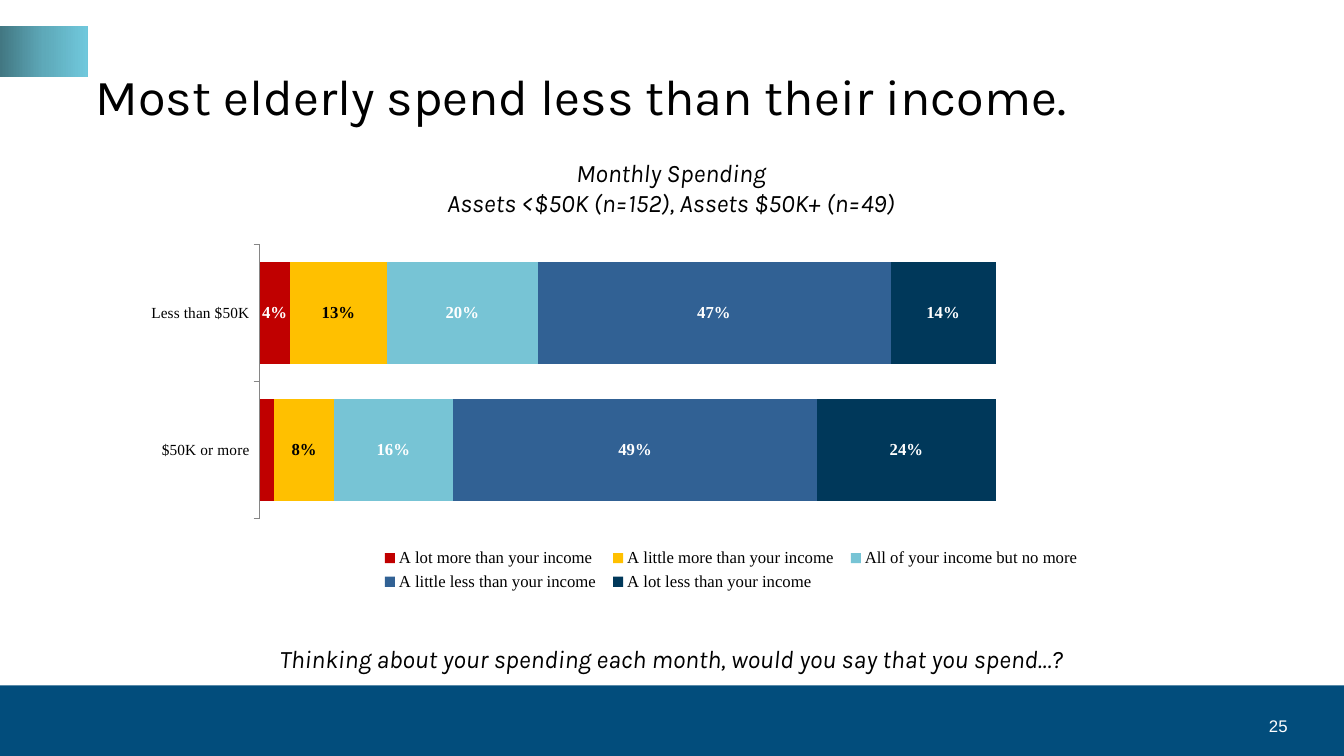
from copy import deepcopy
from dataclasses import dataclass

from pptx import Presentation
from pptx.chart.data import CategoryChartData
from pptx.dml.color import RGBColor
from pptx.enum.chart import XL_CHART_TYPE, XL_LABEL_POSITION as LABEL_POS
from pptx.enum.chart import XL_LEGEND_POSITION, XL_TICK_LABEL_POSITION, XL_TICK_MARK as TICK
from pptx.enum.shapes import MSO_SHAPE
from pptx.enum.text import MSO_ANCHOR as ANCHOR, MSO_AUTO_SIZE as AUTO, PP_ALIGN as ALIGN
from pptx.oxml import parse_xml
from pptx.oxml.ns import nsdecls
from pptx.util import Pt

PX = 9144
COLORS = {
    "black": "000000", "white": "FFFFFF", "band": "024D7C", "axis": "868686",
    "red": "C00000", "amber": "FFC000", "aqua": "77C4D5", "blue": "316194", "navy": "00385A",
    "tag_start": "427782", "tag_mid": "5EA9B9", "tag_end": "70C8DC",
}
CATEGORIES = ["Less than $50K", "$50K or more"]


@dataclass
class Label:
    text: str
    box: tuple[int, int, int, int]
    size: int = 18
    font: str = "Karla"
    color: str = "black"
    align: ALIGN = ALIGN.CENTER
    anchor: ANCHOR = ANCHOR.TOP
    italic: bool = False
    wrap: bool = False


@dataclass
class Answer:
    name: str
    shares: tuple[float, float]
    fill: str
    ink: str = "white"


TITLE = Label("Most elderly spend less than their income.", (85, 48, 1175, 94), 36,
              align=ALIGN.LEFT, anchor=ANCHOR.MIDDLE, wrap=True)
LABELS = [
    Label("25", (1197, 700, 90, 40), 12, "Arial", "white", ALIGN.RIGHT, ANCHOR.MIDDLE, wrap=True),
    Label("Monthly Spending\nAssets <$50K (n=152), Assets $50K+ (n=49)",
          (405, 151, 521, 71), italic=True),
    Label("Thinking about your spending each month, would you say that you spend…?",
          (228, 633, 876, 40), italic=True),
]
ANSWERS = [
    Answer("A lot more than your income", (0.04, 0.02), "red"),
    Answer("A little more than your income", (0.13, 0.08), "amber", "black"),
    Answer("All of your income but no more", (0.20, 0.16), "aqua"),
    Answer("A little less than your income", (0.47, 0.49), "blue"),
    Answer("A lot less than your income", (0.14, 0.24), "navy"),
]


def rgb(name: str) -> RGBColor:
    return RGBColor.from_string(COLORS[name])


def emu(box: tuple[int, int, int, int]) -> list[int]:
    return [n * PX for n in box]


def style_font(font, size: int, name: str, color: str, bold: bool = False,
               italic: bool = False) -> None:
    font.size, font.name, font.bold, font.italic = Pt(size), name, bold, italic
    font.color.rgb = rgb(color)


def write(sp, label: Label) -> None:
    sp.left, sp.top, sp.width, sp.height = emu(label.box)
    tf = sp.text_frame
    tf.text = label.text
    tf.word_wrap, tf.auto_size, tf.vertical_anchor = label.wrap, AUTO.NONE, label.anchor
    for p in tf.paragraphs:
        p.alignment = label.align
        for r in p.runs:
            style_font(r.font, label.size, label.font, label.color, italic=label.italic)


def add_rect(slide, box: tuple[int, int, int, int]):
    sp = slide.shapes.add_shape(MSO_SHAPE.RECTANGLE, *emu(box))
    sp.shadow.inherit = False
    sp.line.fill.background()
    return sp


def add_tag(slide) -> None:
    sp = add_rect(slide, (0, 26, 87, 50))
    sp.fill.gradient()
    sp.fill.gradient_angle = 0
    first = sp._element.xpath(".//a:gs")[0]
    first.addnext(deepcopy(first))
    names = ("tag_start", "tag_mid", "tag_end")
    for i, (stop, name) in enumerate(zip(sp.fill.gradient_stops, names)):
        stop.color.rgb = rgb(name)
        stop.position = i / 2


def layout_xml(x: float, y: float, w: float, h: float, inner: bool = False):
    target = '<c:layoutTarget val="inner"/>' if inner else ""
    return parse_xml(
        f'<c:layout {nsdecls("c")}><c:manualLayout>{target}'
        '<c:xMode val="edge"/><c:yMode val="edge"/>'
        f'<c:x val="{x}"/><c:y val="{y}"/><c:w val="{w}"/><c:h val="{h}"/>'
        '</c:manualLayout></c:layout>')


def format_answer(series, answer: Answer) -> None:
    series.format.fill.solid()
    series.format.fill.fore_color.rgb = rgb(answer.fill)
    labels = series.data_labels
    labels.show_value = True
    labels.number_format, labels.number_format_is_linked = "0%", False
    labels.position = LABEL_POS.CENTER
    style_font(labels.font, 12, "Times New Roman", answer.ink, bold=True)


def add_spending_chart(slide) -> None:
    data = CategoryChartData(number_format="0%")
    data.categories = CATEGORIES
    for answer in ANSWERS:
        data.add_series(answer.name, answer.shares)
    chart = slide.shapes.add_chart(
        XL_CHART_TYPE.BAR_STACKED_100, *emu((150, 194, 1033, 406)), data).chart
    chart.has_title = False
    style_font(chart.font, 18, "Arial", "black")
    plot = chart.plots[0]
    plot.gap_width, plot.overlap, plot.vary_by_categories = 35, 100, False
    for series, answer in zip(plot.series, ANSWERS):
        format_answer(series, answer)
    plot.series[0]._element.xpath("c:dLbls")[0].insert(0, parse_xml(
        f'<c:dLbl {nsdecls("c")}><c:idx val="1"/><c:delete val="1"/></c:dLbl>'))

    cat = chart.category_axis
    cat.reverse_order = True
    cat.major_tick_mark, cat.minor_tick_mark = TICK.OUTSIDE, TICK.NONE
    cat.format.line.color.rgb = rgb("axis")
    style_font(cat.tick_labels.font, 11, "Times New Roman", "black")
    val = chart.value_axis
    val.minimum_scale, val.maximum_scale = 0, 1
    val.has_major_gridlines = False
    val.major_tick_mark = val.minor_tick_mark = TICK.NONE
    val.tick_label_position = XL_TICK_LABEL_POSITION.NONE
    val.format.line.fill.background()

    chart.has_legend = True
    legend = chart.legend
    legend.position, legend.include_in_layout = XL_LEGEND_POSITION.BOTTOM, False
    style_font(legend.font, 12, "Times New Roman", "black")
    for old in chart._chartSpace.xpath(".//c:plotArea/c:layout | .//c:legend/c:layout"):
        old.getparent().remove(old)
    chart._chartSpace.xpath(".//c:plotArea")[0].insert(
        0, layout_xml(0.1, 0.12, 0.71, 0.67, inner=True))
    chart._chartSpace.xpath(".//c:legendPos")[0].addnext(layout_xml(0.21, 0.85, 0.69, 0.13))


def main() -> None:
    prs = Presentation()
    prs.slide_width, prs.slide_height = 1333 * PX, 750 * PX
    slide = prs.slides.add_slide(prs.slide_layouts[5])
    band = add_rect(slide, (0, 680, 1333, 70))
    band.fill.solid()
    band.fill.fore_color.rgb = rgb("band")
    write(slide.shapes.title, TITLE)
    for label in LABELS:
        write(slide.shapes.add_textbox(*emu(label.box)), label)
    add_tag(slide)
    add_spending_chart(slide)
    prs.save("out.pptx")


if __name__ == "__main__":
    main()
